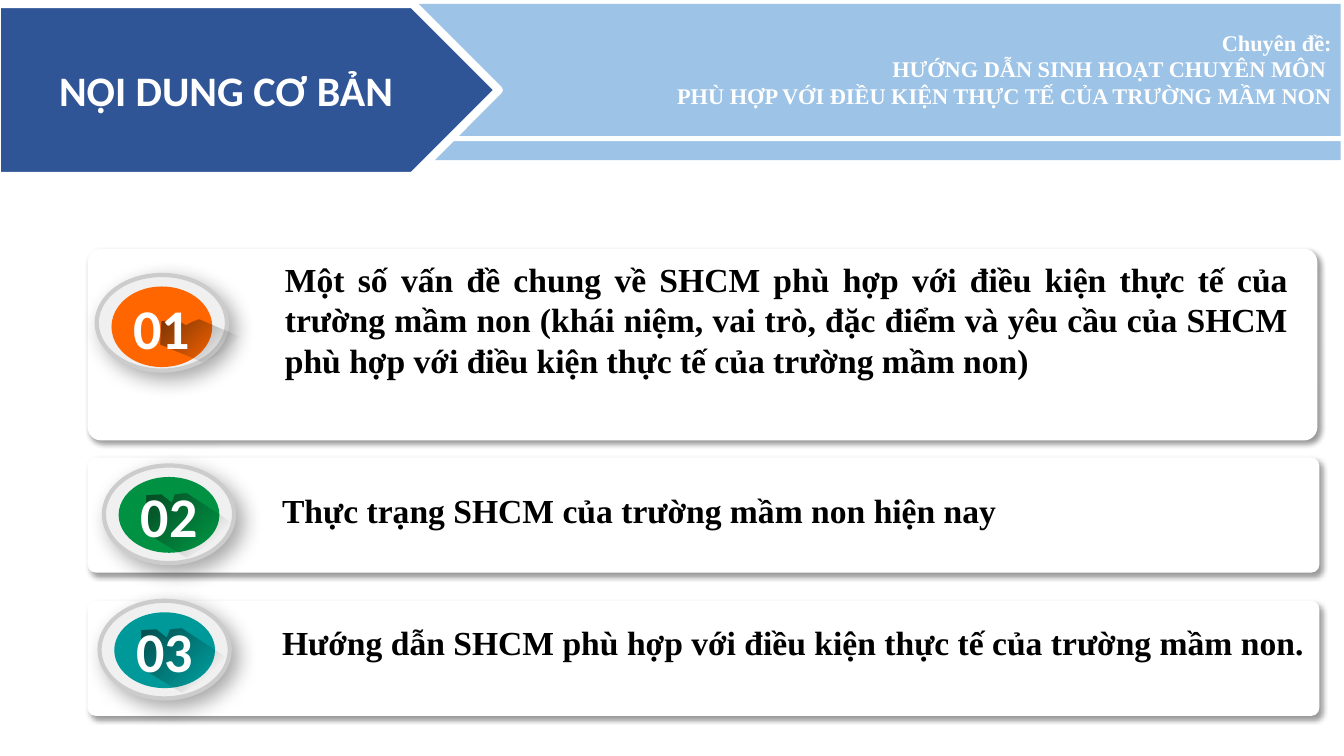
"""Build the agenda slide with a banner, a title arrow and three numbered cards."""
from lxml.etree import SubElement
from pptx import Presentation
from pptx.dml.color import RGBColor
from pptx.enum.shapes import MSO_SHAPE
from pptx.enum.text import MSO_ANCHOR, MSO_AUTO_SIZE, PP_ALIGN
from pptx.oxml import parse_xml
from pptx.oxml.ns import nsdecls, qn
from pptx.util import Cm, Pt

WHITE = RGBColor(0xFF, 0xFF, 0xFF)
BLACK = RGBColor(0x00, 0x00, 0x00)
SKY = RGBColor(0x9D, 0xC3, 0xE6)
NAVY = RGBColor(0x2F, 0x55, 0x97)
RING_FILL = RGBColor(0xF0, 0xF0, 0xF0)
RING_LINE = RGBColor(0xCC, 0xCC, 0xCC)
ORANGE = RGBColor(0xFF, 0x66, 0x00)
GREEN = RGBColor(0x00, 0x92, 0x42)
TEAL = RGBColor(0x00, 0x99, 0x99)

SHADOW = (
    f'<a:effectLst {nsdecls("a")}><a:outerShdw blurRad="%d" dist="%d" dir="2700000" algn="tl" '
    'rotWithShape="0"><a:srgbClr val="000000"><a:alpha val="%d"/></a:srgbClr>'
    '</a:outerShdw></a:effectLst>'
)
CARD_SHADOW = (Pt(4), Pt(3), 40000)
RING_SHADOW = (Pt(15), Pt(7), 35000)
HEADING_SHADOW = (Pt(3), Pt(3), 45000)


def write_text(shape, text, size, color, font="Times New Roman", align=PP_ALIGN.LEFT,
               anchor=MSO_ANCHOR.TOP, margin=None, shadow=None):
    frame = shape.text_frame
    frame.word_wrap = True
    frame.auto_size = MSO_AUTO_SIZE.NONE
    frame.vertical_anchor = anchor
    if margin is not None:
        frame.margin_left = frame.margin_right = margin
        frame.margin_top = frame.margin_bottom = margin
    frame.text = text
    for paragraph in frame.paragraphs:
        paragraph.alignment = align
        for run in paragraph.runs:
            run.font.name = font
            run.font.size = Pt(size)
            run.font.bold = True
            run.font.color.rgb = color
            if shadow:
                fill = run.font.fill._xPr.find(qn("a:solidFill"))
                fill.addnext(parse_xml(SHADOW % shadow))


def draw(kind, left, top, width, height, fill, line=None, line_width=0, shadow=None):
    shape = slide.shapes.add_shape(kind, Cm(left), Cm(top), Cm(width), Cm(height))
    shape.fill.solid()
    shape.fill.fore_color.rgb = fill
    if line is None:
        shape.line.fill.background()
    else:
        shape.line.color.rgb = line
        shape.line.width = Pt(line_width)
    shape.shadow.inherit = False
    if shadow:
        properties = shape.element.spPr
        properties.replace(properties.find(qn("a:effectLst")), parse_xml(SHADOW % shadow))
    return shape


presentation = Presentation()
presentation.slide_width = Cm(33.87)
presentation.slide_height = Cm(19.05)
slide = presentation.slides.add_slide(presentation.slide_layouts[5])

draw(MSO_SHAPE.RECTANGLE, -0.08, 0.1, 33.87, 3.94, SKY)
topic = slide.shapes.add_textbox(Cm(15.67), Cm(0.71), Cm(18.14), Cm(2.06))
write_text(topic, "Chuyên đề:\nHƯỚNG DẪN SINH HOẠT CHUYÊN MÔN \n"
           "PHÙ HỢP VỚI ĐIỀU KIỆN THỰC TẾ CỦA TRƯỜNG MẦM NON", 16, WHITE,
           align=PP_ALIGN.RIGHT, anchor=MSO_ANCHOR.MIDDLE, shadow=HEADING_SHADOW)
draw(MSO_SHAPE.RECTANGLE, 5.64, 3.43, 28.2, 0.13, WHITE)

tall_cast = [(2.64, 2.18), (1.6, 1.75), (1.63, 1.17), (2.01, 1.14),
             (2.24, 1.27), (2.39, 1.19), (2.57, 1.12), (3.89, 1.68)]
long_cast = [(2.08, 2.31), (1.04, 1.68), (1.07, 0.76), (1.45, 0.74),
             (1.7, 0.94), (1.78, 0.74), (2.08, 0.71), (3.38, 1.55)]
ring_width, disc_width, disc_drop = 3.28, 2.54, 0.29
agenda = [
    ("01", ORANGE, (6.27, 30.99, 4.83), (2.44, 6.93, 2.41), 2.03, tall_cast,
     (6.93, 6.4, 25.78, 3.33), PP_ALIGN.JUSTIFY,
     "Một số vấn đề chung về SHCM phù hợp với điều kiện thực tế của trường mầm non "
     "(khái niệm, vai trò, đặc điểm và yêu cầu của SHCM phù hợp với điều kiện thực tế "
     "của trường mầm non)"),
    ("02", GREEN, (11.53, 31.04, 2.9), (2.62, 11.73, 2.46), 1.91, long_cast,
     (6.86, 12.22, 24.56, 1.27), PP_ALIGN.LEFT,
     "Thực trạng SHCM của trường mầm non hiện nay"),
    ("03", TEAL, (15.14, 31.04, 2.9), (2.51, 15.14, 2.46), 1.91, long_cast,
     (6.86, 15.54, 26.7, 1.27), PP_ALIGN.LEFT,
     "Hướng dẫn SHCM phù hợp với điều kiện thực tế của trường mầm non."),
]

for number, color, card, ring, disc_height, cast, topic_area, align, content in agenda:
    card_top, card_width, card_height = card
    card_shape = draw(MSO_SHAPE.ROUNDED_RECTANGLE, 2.21, card_top, card_width, card_height,
                      WHITE, shadow=CARD_SHADOW)
    card_shape.adjustments[0] = 0.07

    ring_left, ring_top, ring_height = ring
    draw(MSO_SHAPE.OVAL, ring_left, ring_top, ring_width, ring_height, RING_FILL,
         RING_LINE, 3, RING_SHADOW)
    disc_area = (ring_left + (ring_width - disc_width) / 2, ring_top + disc_drop,
                 disc_width, disc_height)
    draw(MSO_SHAPE.OVAL, *disc_area, color)

    corners = [(Cm(ring_left + x), Cm(ring_top + y)) for x, y in cast]
    outline = slide.shapes.build_freeform(*corners[0])
    outline.add_line_segments(corners[1:])
    number_cast = outline.convert_to_shape()
    number_cast.shadow.inherit = False
    number_cast.line.fill.background()
    number_cast.fill.gradient()
    gradient = number_cast.element.spPr.find(qn("a:gradFill"))
    stops = gradient.find(qn("a:gsLst"))
    for stop in list(stops):
        stops.remove(stop)
    for position, alpha in ((0, 55000), (73000, 0), (100000, 0)):
        stop = SubElement(stops, qn("a:gs"), pos=str(position))
        tone = SubElement(stop, qn("a:srgbClr"), val="0D0D0D")
        SubElement(tone, qn("a:alpha"), val=str(alpha))
    gradient.find(qn("a:lin")).set("ang", "2700000")

    number_box = slide.shapes.add_textbox(*[Cm(length) for length in disc_area])
    write_text(number_box, number, 40, WHITE, font="Calibri", align=PP_ALIGN.CENTER,
               anchor=MSO_ANCHOR.MIDDLE, margin=0)
    content_box = slide.shapes.add_textbox(*[Cm(length) for length in topic_area])
    write_text(content_box, content, 24, BLACK, align=align)

arrow = draw(MSO_SHAPE.PENTAGON, -0.08, 0.1, 12.65, 4.34, NAVY, WHITE, 6)
title = slide.shapes.title
title.left, title.top, title.width, title.height = Cm(-0.08), Cm(0.1), Cm(11.56), Cm(4.34)
write_text(title, "NỘI DUNG CƠ BẢN", 30, WHITE, font="Calibri",
           align=PP_ALIGN.CENTER, anchor=MSO_ANCHOR.MIDDLE)
arrow.element.addnext(title.element)

presentation.save("out.pptx")
